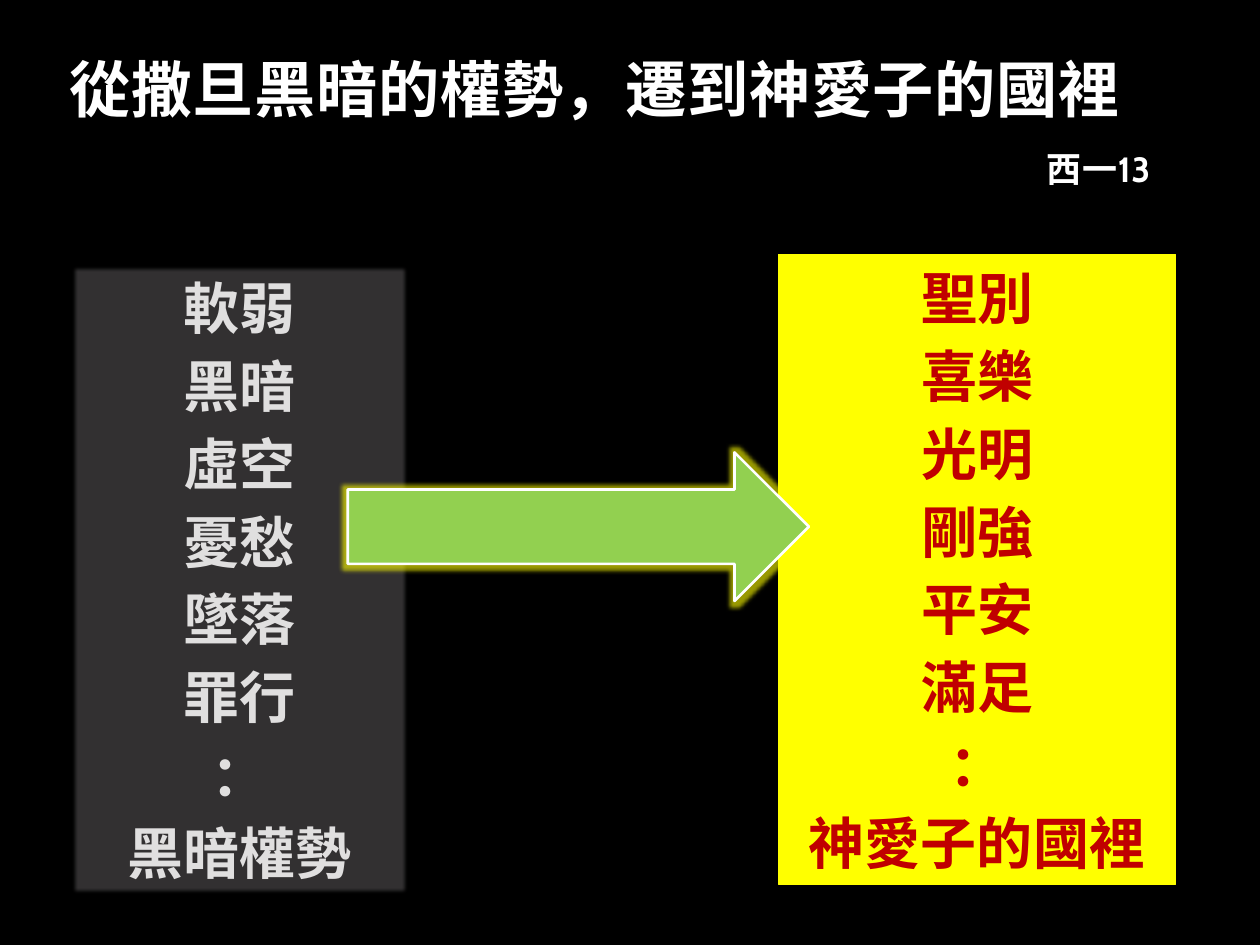
from lxml import etree
from pptx import Presentation
from pptx.dml.color import RGBColor
from pptx.enum.shapes import MSO_SHAPE as Shape
from pptx.enum.text import MSO_ANCHOR as Anchor, MSO_AUTO_SIZE as AutoSize, PP_ALIGN as Align
from pptx.oxml import parse_xml
from pptx.oxml.ns import nsdecls, qn
from pptx.util import Inches, Pt

COLORS = {"black": "000000", "white": "FFFFFF", "yellow": "FFFF00", "red": "C00000",
          "charcoal": "323031", "pale": "E0DFDF", "green": "92D050"}
HAN_FONT = "Noto Sans CJK SC"


def rgb(name):
    return RGBColor.from_string(COLORS[name])


def style_line(paragraph, size, color, font, leading, before):
    paragraph.line_spacing = Pt(leading)
    paragraph.space_before = Pt(before)
    for run in paragraph.runs:
        run.font.size = Pt(size)
        run.font.bold = True
        run.font.name = font
        run.font.color.rgb = rgb(color)
        etree.SubElement(run.font._element, qn("a:ea")).set("typeface", HAN_FONT)


prs = Presentation()
prs.slide_width, prs.slide_height = Inches(10), Inches(7.5)
slide = prs.slides.add_slide(prs.slide_layouts[5])
slide.background.fill.solid()
slide.background.fill.fore_color.rgb = rgb("black")

# Title with its verse reference
title = slide.shapes.title
title.left, title.top, title.width, title.height = map(Inches, (0.35, 0.31, 8.98, 1.32))
heading = title.text_frame
heading.text = "從撒旦黑暗的權勢，遷到神愛子的國裡\n西一13"
heading.auto_size = AutoSize.NONE
heading.word_wrap = True
heading.vertical_anchor = Anchor.TOP
heading.margin_left = heading.margin_right = Inches(0.2)
heading.margin_top = Inches(0.1)
for line, size, leading, before, align in zip(
        heading.paragraphs, (35, 20), (42, 24), (0, 13), (Align.LEFT, Align.RIGHT)):
    line.alignment = align
    style_line(line, size, "white", "Cabin", leading, before)
    for run in line.runs:
        run.font._element.set("spc", "30")

# Two kingdoms: left, top, width, fill, text colour, words
kingdoms = [
    (6.18, 2.02, 3.15, "yellow", "red",
     ["聖別", "喜樂", "光明", "剛強", "平安", "滿足", "：", "神愛子的國裡"]),
    (0.56, 2.1, 2.68, "charcoal", "pale",
     ["軟弱", "黑暗", "虛空", "憂愁", "墜落", "罪行", "：", "黑暗權勢"]),
]
for left, top, width, fill, color, words in kingdoms:
    panel = slide.shapes.add_shape(
        Shape.RECTANGLE, Inches(left), Inches(top), Inches(width), Inches(5))
    panel.shadow.inherit = False
    panel.fill.solid()
    panel.fill.fore_color.rgb = rgb(fill)
    if fill == "yellow":
        panel.line.color.rgb = rgb(fill)
        panel.line.width = Pt(0.75)
    else:
        panel.line.fill.background()
        effects = panel._element.spPr.find(qn("a:effectLst"))
        etree.SubElement(effects, qn("a:softEdge")).set("rad", str(Pt(2.5)))
    frame = panel.text_frame
    frame.text = "\n".join(words)
    frame.word_wrap = True
    frame.vertical_anchor = Anchor.MIDDLE
    for line in frame.paragraphs:
        line.alignment = Align.CENTER
        style_line(line, 32, color, HAN_FONT, 38.5, 6)

# Glowing arrow from darkness to the kingdom
passage = slide.shapes.add_shape(
    Shape.RIGHT_ARROW, Inches(2.76), Inches(3.59), Inches(3.66), Inches(1.18))
passage.shadow.inherit = False
passage.fill.solid()
passage.fill.fore_color.rgb = rgb("green")
passage.line.color.rgb = rgb("white")
passage.line.width = Pt(1.5)
passage._element.spPr.find(qn("a:effectLst")).append(parse_xml(
    f'<a:glow {nsdecls("a")} rad="{Pt(5)}"><a:srgbClr val="{COLORS["yellow"]}">'
    '<a:alpha val="60000"/></a:srgbClr></a:glow>'))

prs.save("out.pptx")
